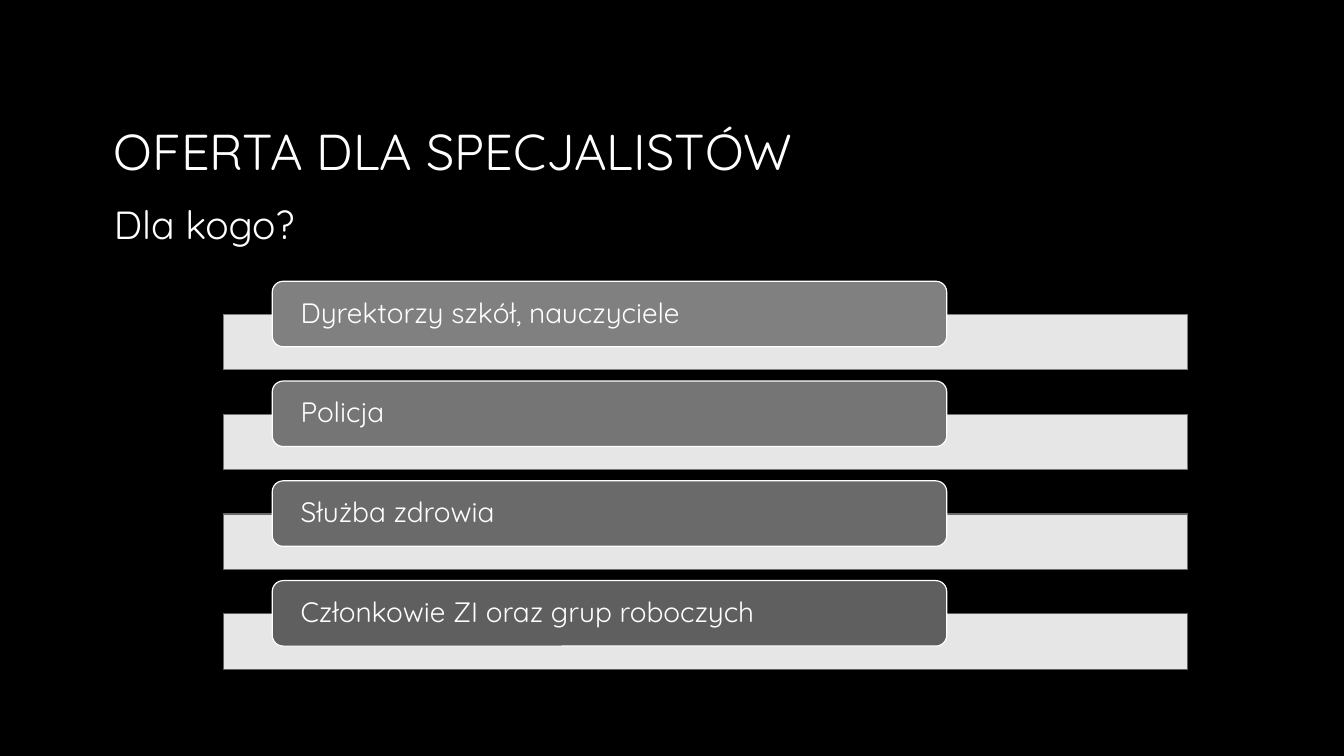
from lxml import etree
from pptx import Presentation
from pptx.dml.color import RGBColor
from pptx.enum.shapes import MSO_SHAPE
from pptx.enum.text import MSO_ANCHOR, MSO_AUTO_SIZE, PP_ALIGN
from pptx.oxml.ns import qn
from pptx.util import Inches, Pt

RECTANGLE = MSO_SHAPE.RECTANGLE
ROUNDED = MSO_SHAPE.ROUNDED_RECTANGLE
TOP, MIDDLE, BOTTOM = MSO_ANCHOR.TOP, MSO_ANCHOR.MIDDLE, MSO_ANCHOR.BOTTOM
LEFT = PP_ALIGN.LEFT
NO_AUTOFIT = MSO_AUTO_SIZE.NONE
TITLE_ONLY = 5

AUDIENCES = [
    ("Dyrektorzy szkół, nauczyciele", "808080"),
    ("Policja", "757575"),
    ("Służba zdrowia", "6A6A6A"),
    ("Członkowie ZI oraz grup roboczych", "5F5F5F"),
]
FIRST_TOP = 2.79
ROW_STEP = 0.99
STRIP_OFFSET = 0.33


def color(value):
    return RGBColor.from_string(value)


class SlideBuilder:
    font_name = "Quicksand"
    background = "000000"
    foreground = "FFFFFF"
    line_width = Pt(0.85)

    def __init__(self, presentation):
        self.slide = presentation.slides.add_slide(presentation.slide_layouts[TITLE_ONLY])
        fill = self.slide.background.fill
        fill.solid()
        fill.fore_color.rgb = color(self.background)

    def set_text(self, shape, text, size, anchor, spacing, margins):
        frame = shape.text_frame
        frame.text = text
        frame.word_wrap = True
        frame.auto_size = NO_AUTOFIT
        frame.vertical_anchor = anchor
        frame.margin_left = frame.margin_right = Inches(margins[0])
        frame.margin_top = frame.margin_bottom = Inches(margins[1])
        paragraph = frame.paragraphs[0]
        paragraph.alignment = LEFT
        paragraph.line_spacing = spacing
        font = paragraph.runs[0].font
        font.name = self.font_name
        font.size = Pt(size)
        font.color.rgb = color(self.foreground)

    def title(self, text, left, top, width, height):
        shape = self.slide.shapes.title
        shape.left, shape.top = Inches(left), Inches(top)
        shape.width, shape.height = Inches(width), Inches(height)
        self.set_text(shape, text, 36, BOTTOM, 0.8, (0.13, 0.07))

    def subtitle(self, text, left, top, width, height):
        shape = self.slide.shapes.add_textbox(
            Inches(left), Inches(top), Inches(width), Inches(height))
        self.set_text(shape, text, 28, TOP, 0.9, (0.13, 0.07))

    def box(self, kind, left, top, width, height, fill, line):
        shape = self.slide.shapes.add_shape(
            kind, Inches(left), Inches(top), Inches(width), Inches(height))
        shape.shadow.inherit = False
        shape.fill.solid()
        shape.fill.fore_color.rgb = color(fill)
        shape.line.color.rgb = color(line)
        shape.line.width = self.line_width
        return shape

    def strip(self, top, line):
        shape = self.box(RECTANGLE, 2.22, top, 9.56, 0.55, self.foreground, line)
        fill_color = shape.element.spPr.find(qn("a:solidFill"))[0]
        etree.SubElement(fill_color, qn("a:alpha"), val="90000")

    def label(self, text, top, fill):
        shape = self.box(ROUNDED, 2.7, top, 6.69, 0.65, fill, self.foreground)
        self.set_text(shape, text, 20, MIDDLE, 0.9, (0.25, 0))


def main():
    presentation = Presentation()
    presentation.slide_width = Inches(13.33)
    presentation.slide_height = Inches(7.5)
    builder = SlideBuilder(presentation)

    # Headings
    builder.title("OFERTA DLA SPECJALISTÓW", 1, 0.53, 11.33, 1.33)
    builder.subtitle("Dla kogo?", 1, 1.97, 11.33, 0.65)

    # Audience list: a label over each strip
    for index, (audience, shade) in enumerate(AUDIENCES):
        top = FIRST_TOP + index * ROW_STEP
        builder.strip(top + STRIP_OFFSET, shade)
        builder.label(audience, top, shade)

    presentation.save("out.pptx")


if __name__ == "__main__":
    main()
